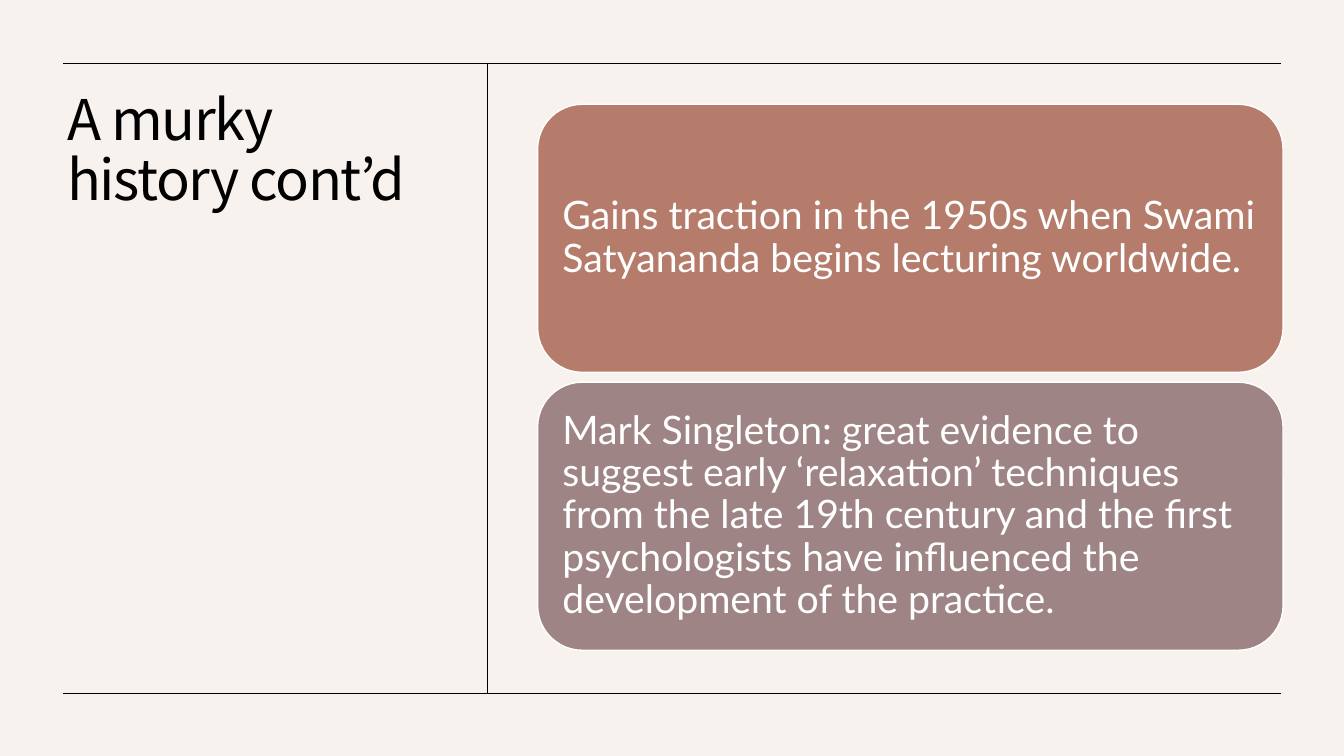
from pptx import Presentation
from pptx.dml.color import RGBColor
from pptx.enum import shapes, text
from pptx.oxml.ns import qn
from pptx.util import Pt
from lxml import etree

TITLE = "A murky history cont’d"
CARDS = [
    ("Gains traction in the 1950s when Swami Satyananda begins lecturing worldwide.", "clay"),
    ("Mark Singleton: great evidence to suggest early ‘relaxation’ techniques from the "
     "late 19th century and the first psychologists have influenced the development of "
     "the practice.", "mauve"),
]
COLORS = {"paper": "F7F2EE", "ink": "000000", "white": "FFFFFF",
          "clay": "B57B6B", "mauve": "9E8484"}

LEFT, RIGHT, TOP, BOTTOM = 45, 915, 45, 495
DIVIDER_X = 348
RULES = [(RIGHT, BOTTOM, LEFT, BOTTOM),
         (DIVIDER_X, TOP, DIVIDER_X, BOTTOM),
         (RIGHT, TOP, LEFT, TOP)]
CARD_X, CARD_Y, CARD_W, CARD_H, CARD_GAP = 384, 74.5, 532.5, 191.5, 7
INSET = 8.4


def color(name):
    return RGBColor.from_string(COLORS[name])


def apply(obj, values):
    for name, value in values.items():
        setattr(obj, name, value)


def write(tf, words, font, size, ink):
    p = tf.paragraphs[0]
    apply(p, {"alignment": text.PP_ALIGN.LEFT, "line_spacing": 0.9})
    r = p.add_run()
    r.text = words
    apply(r.font, {"name": font, "size": Pt(size), "bold": False})
    r.font.color.rgb = color(ink)
    return r


def add_title(slide):
    sp = slide.shapes.title
    apply(sp, {"left": Pt(41), "top": Pt(62), "width": Pt(271.5), "height": Pt(397.5)})
    apply(sp.text_frame, {"word_wrap": True, "auto_size": text.MSO_AUTO_SIZE.NONE,
                          "vertical_anchor": text.MSO_ANCHOR.TOP})
    r = write(sp.text_frame, TITLE, "Noto Sans CJK KR", 40, "ink")
    r.font._element.set("spc", "-100")


def add_rule(slide, ends):
    line = slide.shapes.add_connector(shapes.MSO_CONNECTOR.STRAIGHT, *map(Pt, ends))
    line.line.color.rgb = color("ink")
    line.line.width = Pt(0.5)
    etree.SubElement(line._element.spPr, qn("a:effectLst"))


def add_card(slide, index, words, fill):
    y = CARD_Y + index * (CARD_H + CARD_GAP)
    sp = slide.shapes.add_shape(shapes.MSO_SHAPE.ROUNDED_RECTANGLE,
                                *map(Pt, (CARD_X, y, CARD_W, CARD_H)))
    sp.shadow.inherit = False
    sp.fill.solid()
    sp.fill.fore_color.rgb = color(fill)
    sp.line.color.rgb = color("white")
    sp.line.width = Pt(1)
    margins = {f"margin_{side}": Pt(INSET) for side in ("left", "top", "right", "bottom")}
    apply(sp.text_frame, {"word_wrap": True, "vertical_anchor": text.MSO_ANCHOR.MIDDLE,
                          **margins})
    write(sp.text_frame, words, "Lato", 28, "white")


def main():
    prs = Presentation()
    apply(prs, {"slide_width": Pt(960), "slide_height": Pt(540)})
    slide = prs.slides.add_slide(prs.slide_layouts[5])
    slide.background.fill.solid()
    slide.background.fill.fore_color.rgb = color("paper")
    add_title(slide)
    for ends in RULES:
        add_rule(slide, ends)
    for index, (words, fill) in enumerate(CARDS):
        add_card(slide, index, words, fill)
    prs.save("out.pptx")


if __name__ == "__main__":
    main()
